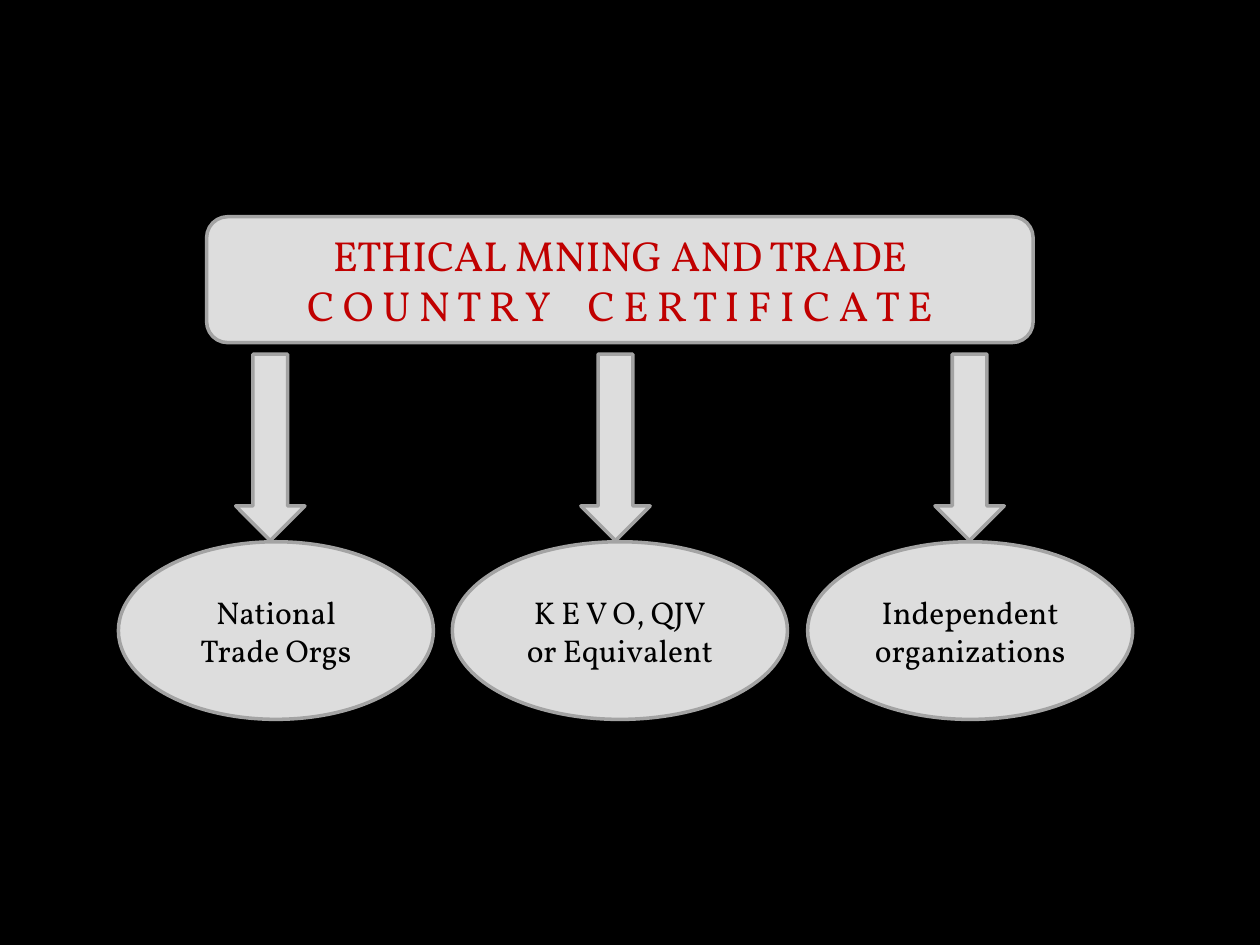
"""Build the slide on ethical mining and trade country certificates."""
from pptx import Presentation
from pptx.dml.color import RGBColor
from pptx.enum.shapes import MSO_SHAPE
from pptx.enum.text import MSO_ANCHOR, PP_ALIGN
from pptx.util import Inches, Pt

BOX = MSO_SHAPE.ROUNDED_RECTANGLE
OVAL = MSO_SHAPE.OVAL
ARROW = MSO_SHAPE.DOWN_ARROW
MIDDLE = MSO_ANCHOR.MIDDLE
CENTER = PP_ALIGN.CENTER

BLACK = RGBColor(0x00, 0x00, 0x00)
RED = RGBColor(0xC0, 0x00, 0x00)
LIGHT_GREY = RGBColor(0xDD, 0xDD, 0xDD)
GREY = RGBColor(0xA3, 0xA3, 0xA3)
FONT = "Vollkorn"
WORD_GAP = "1600"

presentation = Presentation()
presentation.slide_width = Inches(10)
presentation.slide_height = Inches(7.5)
COL = presentation.slide_width / 100
ROW = presentation.slide_height / 100

slide = presentation.slides.add_slide(presentation.slide_layouts[6])
slide.background.fill.solid()
slide.background.fill.fore_color.rgb = BLACK


def add_figure(kind, left, top, width, height):
    figure = slide.shapes.add_shape(
        kind, int(left * COL), int(top * ROW), int(width * COL), int(height * ROW))
    figure.shadow.inherit = False
    figure.fill.solid()
    figure.fill.fore_color.rgb = LIGHT_GREY
    figure.line.color.rgb = GREY
    figure.line.width = Pt(2)
    return figure


def write_lines(figure, lines, size, color):
    frame = figure.text_frame
    frame.word_wrap = True
    frame.vertical_anchor = MIDDLE
    for number, words in enumerate(lines):
        paragraph = frame.add_paragraph() if number else frame.paragraphs[0]
        paragraph.alignment = CENTER
        for text in words:
            run = paragraph.add_run()
            run.text = text
            run.font.name = FONT
            run.font.size = Pt(size)
            run.font.color.rgb = color
            if text == " ":
                run._r.get_or_add_rPr().set("spc", WORD_GAP)


certificate = add_figure(BOX, 16.4, 22.93, 65.6, 13.33)
write_lines(certificate, [
    ["ETHICAL MNING AND TRADE"],
    ["C O U N T R Y", " ", "C E R T I F I C A T E"],
], 24, RED)

issuers = [
    (9.4, 25, 18.7, [["National Trade Orgs"]]),
    (35.9, 26.6, 46.1, [["K E V O, QJV"], ["or Equivalent"]]),
    (64.1, 25.8, 74.2, [["Independent organizations"]]),
]
for left, width, arrow_left, lines in issuers:
    issuer = add_figure(OVAL, left, 57.33, width, 18.8)
    write_lines(issuer, lines, 18, BLACK)
    add_figure(ARROW, arrow_left, 37.47, 5.5, 19.73)

presentation.save("out.pptx")
